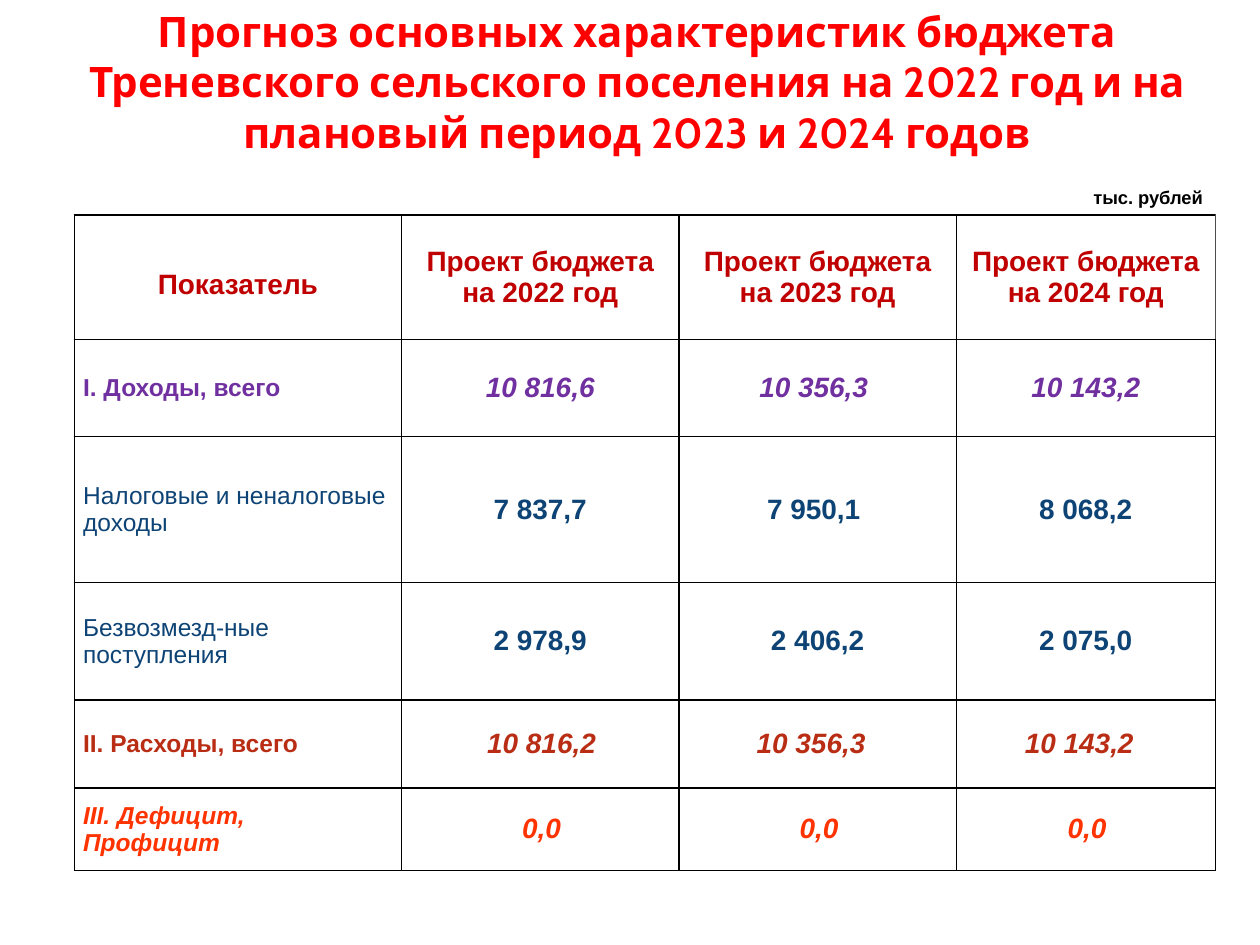
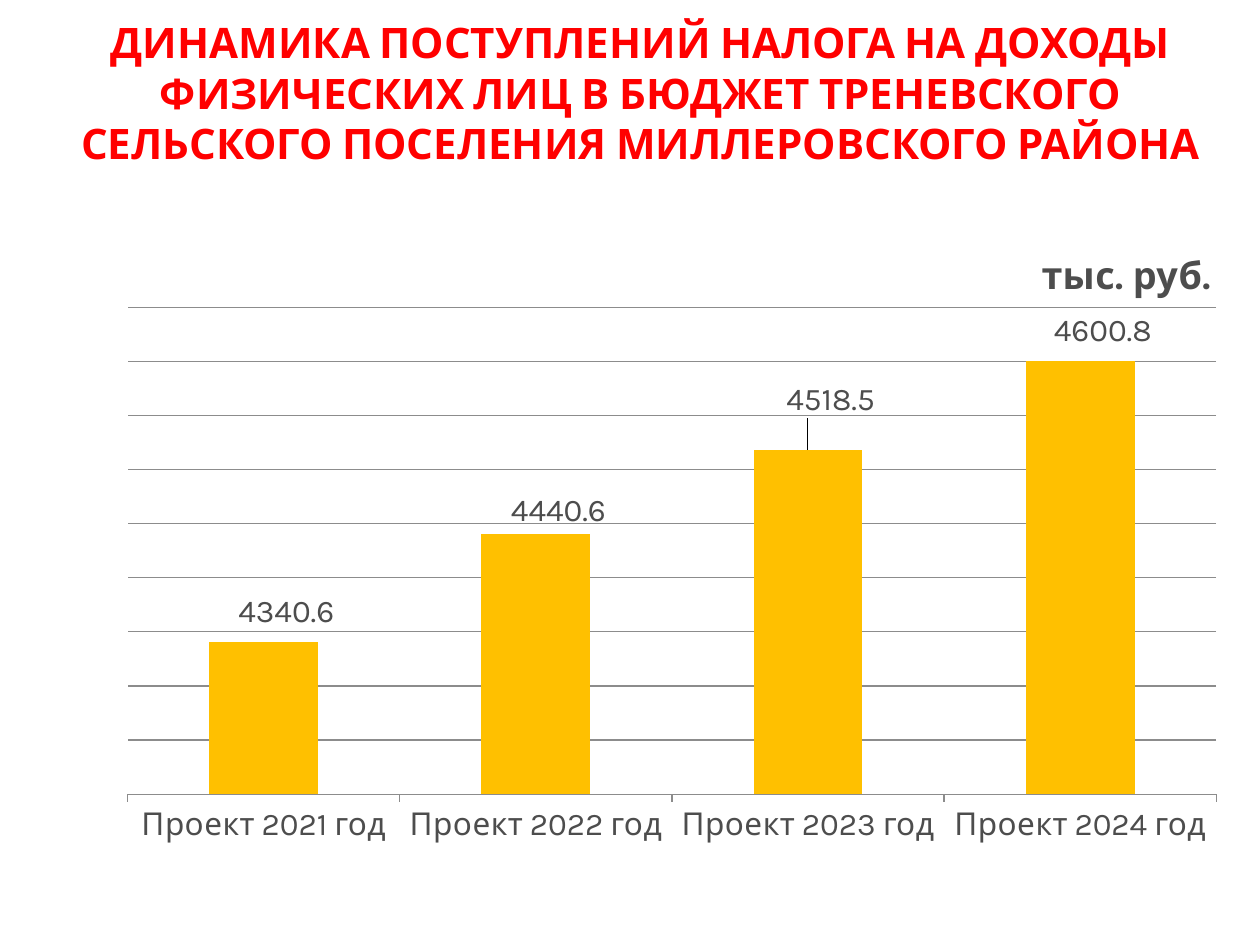
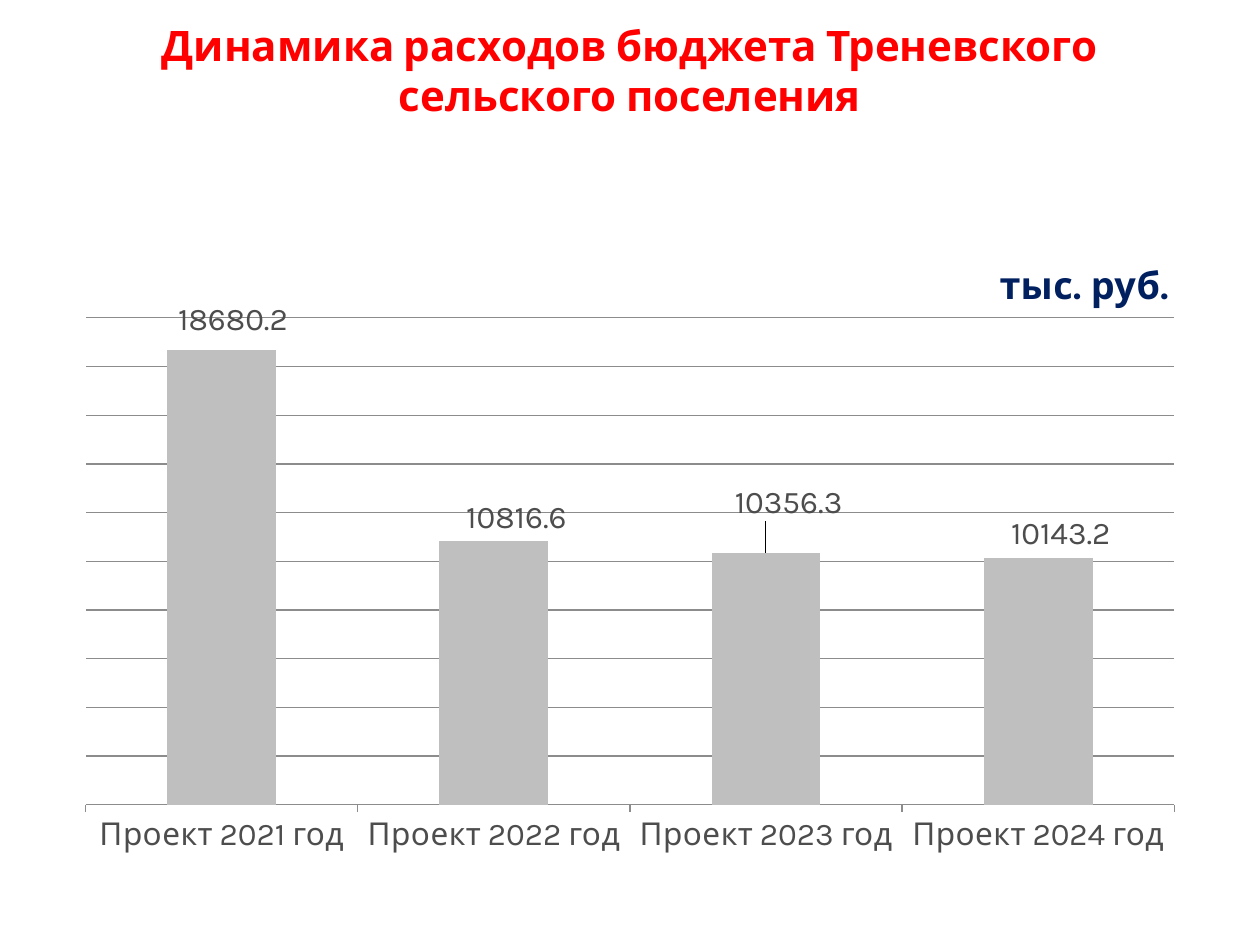
import dataclasses

import lxml.etree
import pptx
import pptx.chart.data
import pptx.dml.color
import pptx.enum.chart
import pptx.enum.text
import pptx.oxml
import pptx.oxml.ns
import pptx.util

Pt = pptx.util.Pt
RGB = pptx.dml.color.RGBColor.from_string
ALIGN = pptx.enum.text.PP_ALIGN
ANCHOR = pptx.enum.text.MSO_ANCHOR
qn = pptx.oxml.ns.qn


@dataclasses.dataclass(frozen=True)
class Theme:
    title_font: str = "Cabin"
    table_font: str = "Arial"
    chart_font: str = "Karla"
    title: str = "FF0000"
    black: str = "000000"
    gray: str = "4D4D4D"
    grid: str = "8C8C8C"
    header: str = "C00000"
    income: str = "7030A0"
    detail: str = "0E4475"
    expense: str = "B92D14"
    deficit: str = "FF3300"
    navy: str = "002060"
    gold: str = "FFC000"
    silver: str = "BFBFBF"
    title_size: float = 24
    value_size: float = 16
    label_size: float = 14
    note_size: float = 10.5
    chart_size: float = 18
    chart_title_size: float = 21.6


T = Theme()


def write(tf, text, font=T.table_font, size=T.value_size, color=T.black, bold=True,
          italic=False, align=ALIGN.CENTER, indent=0, spacing=None):
    """Fill a text frame; newlines part paragraphs, vertical tabs part lines."""
    for i, line in enumerate(text.split("\n")):
        p = tf.add_paragraph() if i else tf.paragraphs[0]
        p.text = line
        p.alignment = align
        if spacing:
            p.line_spacing = spacing
        if indent:
            p._p.get_or_add_pPr().set("indent", str(Pt(indent)))
        for r in p.runs:
            r.font.name, r.font.size = font, Pt(size)
            r.font.bold, r.font.italic = bold, italic
            r.font.color.rgb = RGB(color)


def add_text(s, box, text, anchor=ANCHOR.TOP, **fmt):
    tf = s.shapes.add_textbox(*map(Pt, box)).text_frame
    tf.word_wrap = True
    tf.vertical_anchor = anchor
    write(tf, text, **fmt)


title_style = dict(font=T.title_font, size=T.title_size, color=T.title)

prs = pptx.Presentation()
prs.slide_width, prs.slide_height = Pt(720), Pt(540)
blank = prs.slide_layouts[6]

# Budget table
s = prs.slides.add_slide(blank)
add_text(s, (8.5, 15, 711.5, 62.5),
         "Прогноз основных характеристик бюджета Треневского сельского поселения "
         "на 2022 год и на плановый период 2023 и 2024 годов",
         anchor=ANCHOR.MIDDLE, **title_style)
add_text(s, (592.5, 103, 102, 20), "тыс. рублей", size=T.note_size, align=ALIGN.RIGHT)

header = ["Показатель"] + [f"Проект бюджета на {year} год" for year in (2022, 2023, 2024)]
# label, values, colour, bold label, italic label, italic values, value indent
budget = [
    ("I. Доходы, всего", ("10 816,6", "10 356,3", "10 143,2"), T.income, True, False, True, -5),
    ("Налоговые и неналоговые доходы", ("7 837,7", "7 950,1", "8 068,2"),
     T.detail, False, False, False, -5),
    ("Безвозмезд-ные поступления", ("2 978,9", "2 406,2", "2 075,0"),
     T.detail, False, False, False, -5),
    ("II. Расходы, всего", ("10 816,2", "10 356,3", "10 143,2"), T.expense, True, False, True, 1.5),
    ("III. Дефицит,\nПрофицит", ("0,0", "0,0", "0,0"), T.deficit, True, True, True, 1.5),
]
extra_right = {(1, 2): 4.5, (2, 2): 4.5, (4, 2): 9, (4, 3): 9}
col_widths = (187, 158.5, 158.5, 148)
row_heights = (71, 55.5, 83.5, 67, 50.5, 47)

table = s.shapes.add_table(len(row_heights), len(col_widths), Pt(42.5), Pt(123),
                           Pt(sum(col_widths)), Pt(sum(row_heights))).table
table.first_row = table.horz_banding = False
for col, width in zip(table.columns, col_widths):
    col.width = Pt(width)
for row, height in zip(table.rows, row_heights):
    row.height = Pt(height)

for c, text in enumerate(header):
    write(table.cell(0, c).text_frame, text, color=T.header,
          indent=0 if c else -5, spacing=None if c else 1.5)
for r, (label, values, color, bold, italic, value_italic, indent) in enumerate(budget, 1):
    write(table.cell(r, 0).text_frame, label, size=T.label_size, color=color,
          bold=bold, italic=italic, align=ALIGN.LEFT)
    for c, value in enumerate(values, 1):
        write(table.cell(r, c).text_frame, value, color=color, italic=value_italic, indent=indent)

for r in range(len(row_heights)):
    for c in range(len(col_widths)):
        cell = table.cell(r, c)
        cell.vertical_anchor = ANCHOR.MIDDLE
        cell.margin_left = Pt(5)
        cell.margin_right = Pt(5 + extra_right.get((r, c), 0))
        cell.margin_top = cell.margin_bottom = 0
        cell.fill.background()
        for i, side in enumerate(("lnL", "lnR", "lnT", "lnB")):
            color = T.gray if (r, c, side) == (0, 3, "lnR") else T.black
            cell._tc.get_or_add_tcPr().insert(i, pptx.oxml.parse_xml(
                f'<a:{side} {pptx.oxml.ns.nsdecls("a")} w="{Pt(1)}"><a:solidFill>'
                f'<a:srgbClr val="{color}"/></a:solidFill></a:{side}>'))

# Chart slides
years = [f"Проект {year} год" for year in range(2021, 2025)]
chart_slides = [
    dict(title="ДИНАМИКА ПОСТУПЛЕНИЙ НАЛОГА НА ДОХОДЫ\vФИЗИЧЕСКИХ ЛИЦ В БЮДЖЕТ ТРЕНЕВСКОГО "
               "СЕЛЬСКОГО ПОСЕЛЕНИЯ МИЛЛЕРОВСКОГО РАЙОНА",
         title_box=(24, 6, 684, 94), anchor=ANCHOR.TOP, chart_at=(60, 120),
         values=(4340.6, 4440.6, 4518.5, 4600.8), scale=(4200, 4650, 50),
         color=T.gold, unit_color=T.gray,
         label_shifts=((0.02, -0.01), (0.02, 0), (0.02, -0.04), (0.02, -0.01))),
    dict(title="Динамика расходов бюджета Треневского сельского поселения",
         title_box=(72, 12, 576, 56), anchor=ANCHOR.MIDDLE, chart_at=(36, 126),
         values=(18680.2, 10816.6, 10356.3, 10143.2), scale=(0, 20000, 2000),
         color=T.silver, unit_color=T.navy,
         label_shifts=((0.01, -0.01), (0.02, 0), (0.02, -0.04), (0.02, 0))),
]

for item in chart_slides:
    s = prs.slides.add_slide(blank)
    add_text(s, item["title_box"], item["title"], anchor=item["anchor"], **title_style)

    data = pptx.chart.data.CategoryChartData()
    data.categories = years
    data.add_series("Series 1", item["values"])
    chart = s.shapes.add_chart(pptx.enum.chart.XL_CHART_TYPE.COLUMN_CLUSTERED,
                               *map(Pt, item["chart_at"]), Pt(648), Pt(371), data).chart
    chart.has_legend = False
    chart.font.name, chart.font.size = T.chart_font, Pt(T.chart_size)
    chart.font.color.rgb = RGB(T.gray)
    write(chart.chart_title.text_frame, "тыс. руб.", font=T.chart_font,
          size=T.chart_title_size, color=item["unit_color"])

    axis = chart.value_axis
    axis.minimum_scale, axis.maximum_scale, axis.major_unit = item["scale"]
    axis.visible = False
    axis.has_major_gridlines = True
    chart.category_axis.major_tick_mark = pptx.enum.chart.XL_TICK_MARK.OUTSIDE
    for line in (axis.major_gridlines.format.line, chart.category_axis.format.line):
        line.color.rgb = RGB(T.grid)
        line.width = Pt(0.75)

    plot = chart.plots[0]
    plot.gap_width = 150
    plot.vary_by_categories = False
    series = plot.series[0]
    series.format.fill.solid()
    series.format.fill.fore_color.rgb = RGB(item["color"])
    outside = pptx.enum.chart.XL_LABEL_POSITION.OUTSIDE_END
    series.data_labels.show_value = True
    series.data_labels.position = outside
    for i in range(len(years)):
        series.points[i].data_label.position = outside

    # Manual layouts, as fractions of the chart area
    chart_space = chart._chartSpace
    layouts = [
        (next(chart_space.iter(qn("c:plotArea"))), 0,
         dict(layoutTarget="inner", xMode="edge", yMode="edge", x=0.02, y=0.15, w=0.96, h=0.75)),
        (next(chart_space.iter(qn("c:title"))), 1, dict(xMode="edge", yMode="edge", x=0.82, y=0.05)),
    ]
    for label, (dx, dy) in zip(chart_space.iter(qn("c:dLbl")), item["label_shifts"]):
        layouts.append((label, 1, dict(x=dx, y=dy)))
    for parent, index, settings in layouts:
        for old in parent.findall(qn("c:layout")):
            parent.remove(old)
        layout = parent.makeelement(qn("c:layout"))
        parent.insert(index, layout)
        manual = lxml.etree.SubElement(layout, qn("c:manualLayout"))
        for tag, value in settings.items():
            lxml.etree.SubElement(manual, qn(f"c:{tag}")).set("val", str(value))

prs.save("out.pptx")
